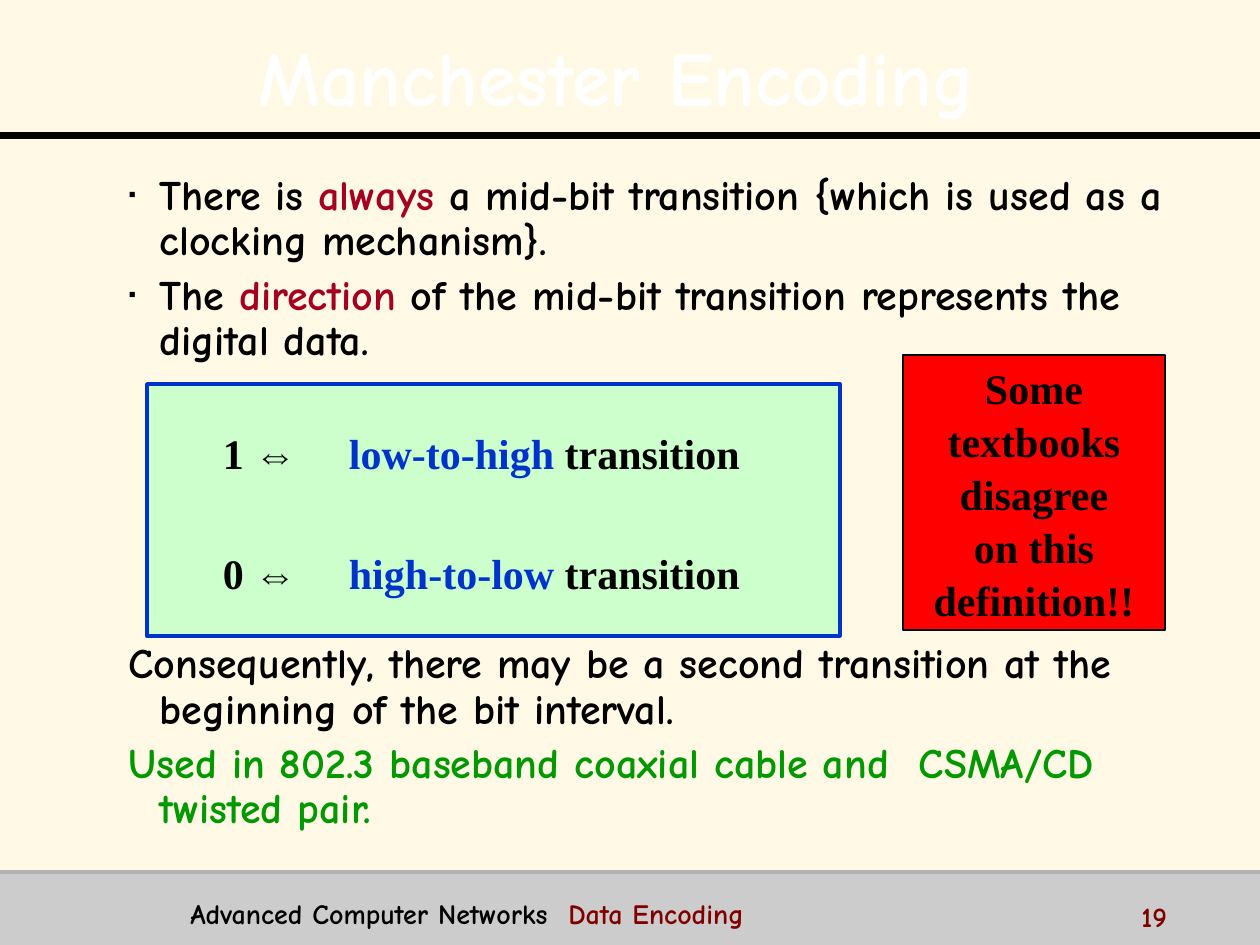
"""Builds the Manchester Encoding slide."""
import pptx
import pptx.dml.color
import pptx.enum.shapes
import pptx.enum.text
import pptx.oxml
import pptx.oxml.ns
import pptx.util

SCALE = 914400 / 126
ALIGN = pptx.enum.text.PP_ALIGN
ANCHOR = pptx.enum.text.MSO_ANCHOR
COMIC, TIMES = "Comic Neue", "Times New Roman"
BLACK, WHITE, BLUE, RED, MAROON, GREEN = "000000", "FFFFFF", "0033CC", "A50021", "800000", "009900"


def px(*nums):
    """Turn px into EMU."""
    return [pptx.util.Emu(round(num * SCALE)) for num in nums]


def paint(target, color):
    """Give a fill a solid colour."""
    target.solid()
    target.fore_color.rgb = pptx.dml.color.RGBColor.from_string(color)


def attach(node, tag, inner="", **attrs):
    """Append a drawing element to a node."""
    pairs = "".join(f' {key}="{val}"' for key, val in attrs.items())
    space = pptx.oxml.ns.nsdecls("a")
    node.append(pptx.oxml.parse_xml(f"<a:{tag} {space}{pairs}>{inner}</a:{tag}>"))


class Deck:
    """Holds the style and the current slide."""

    def __init__(self, wide, high, back):
        self.show = pptx.Presentation()
        self.show.slide_width, self.show.slide_height = px(wide, high)
        self.slide = self.show.slides.add_slide(self.show.slide_layouts[1])
        paint(self.slide.background.fill, back)

    def line(self, start, end, color, width):
        """Draw a straight line."""
        kind = pptx.enum.shapes.MSO_CONNECTOR.STRAIGHT
        line = self.slide.shapes.add_connector(kind, *px(*start, *end))
        paint(line.line.fill, color)
        line.line.width = pptx.util.Pt(width)
        attach(line._element.spPr, "effectLst")

    def rect(self, box, fill, edge=None, width=0):
        """Draw a filled rectangle and return it."""
        kind = pptx.enum.shapes.MSO_SHAPE.RECTANGLE
        rect = self.slide.shapes.add_shape(kind, *px(*box))
        rect.shadow.inherit = False
        paint(rect.fill, fill)
        if edge:
            paint(rect.line.fill, edge)
            rect.line.width = pptx.util.Pt(width)
        else:
            rect.line.fill.background()
        return rect

    def holder(self, index, box):
        """Move a placeholder and return it."""
        shape = self.slide.placeholders[index]
        shape.left, shape.top, shape.width, shape.height = px(*box)
        shape.text_frame.auto_size = pptx.enum.text.MSO_AUTO_SIZE.NONE
        return shape

    def label(self, box, runs, tab=None):
        """Add a footer text box."""
        shape = self.slide.shapes.add_textbox(*px(*box))
        self.words(shape, [runs], COMIC, 16, tab=tab)

    def words(self, shape, paras, font, size, align=ALIGN.LEFT, lead=None, gaps=(),
              hang=0, marks=0, tab=None, anchor=ANCHOR.TOP):
        """Fill a shape with paragraphs, each a list of (text, colour) runs."""
        frame = shape.text_frame
        frame.word_wrap = True
        frame.vertical_anchor = anchor
        for num, runs in enumerate(paras):
            para = frame.add_paragraph() if num else frame.paragraphs[0]
            para.alignment = align
            para.line_spacing = lead
            para.space_before = pptx.util.Pt(gaps[num - 1] if num and gaps else 0)
            props = para._p.get_or_add_pPr()
            step = px(hang)[0]
            props.set("marL", str(step))
            props.set("indent", str(-step))
            if num < marks:
                attach(props, "buClr", f'<a:srgbClr val="{BLACK}"/>')
                attach(props, "buSzPct", val=50000)
                attach(props, "buChar", char="▪")
            else:
                attach(props, "buNone")
            if tab:
                attach(props, "tabLst", f'<a:tab pos="{px(tab)[0]}" algn="l"/>')
            para.font.name, para.font.size, para.font.bold = font, pptx.util.Pt(size), True
            for text, color in runs:
                run = para.add_run()
                run.text = text
                paint(run.font.fill, color)

    def shade(self, shape):
        """Give the runs of a shape a text shadow."""
        for para in shape.text_frame.paragraphs:
            for run in para.runs:
                attach(run._r.get_or_add_rPr(), "effectLst",
                       '<a:outerShdw dist="35921" dir="2700000">'
                       f'<a:srgbClr val="{BLACK}"/></a:outerShdw>')


def main():
    """Build and save the slide."""
    deck = Deck(1260, 945, "FFF9E6")
    deck.rect((0, 872, 1260, 73), "CCCCCC")
    deck.line((0, 136), (1260, 136), BLACK, 4)
    deck.line((0, 872), (1260, 872), "B2B2B2", 2)

    title = deck.holder(0, (25, 16, 1211, 110))
    deck.words(title, [[("Manchester Encoding ", WHITE)]], COMIC, 44, ALIGN.CENTER, 1.1,
               anchor=ANCHOR.MIDDLE)
    deck.shade(title)

    body = deck.holder(1, (116, 168, 1071, 693))
    deck.words(body, [
        [("There is ", BLACK), ("always", RED),
         (" a mid-bit transition {which is used as a clocking mechanism}.", BLACK)],
        [("The ", BLACK), ("direction", RED),
         (" of the mid-bit transition represents the digital data.", BLACK)],
        [("Consequently, there may be a second transition at the beginning of the bit interval.",
          BLACK)],
        [("Used in 802.3 baseband coaxial cable and  CSMA/CD twisted pair.", GREEN)],
    ], COMIC, 24, lead=0.9, gaps=(5, 159, 5), hang=31, marks=2)

    rule = deck.rect((147, 384, 693, 252), "CCFFCC", BLUE, 2)
    rule.text_frame.margin_left, rule.text_frame.margin_top = px(76, 12)
    deck.words(rule, [
        [(f"{bit} ⇔\t", BLACK), (move, BLUE), (" transition", BLACK)]
        for bit, move in ((1, "low-to-high"), (0, "high-to-low"))
    ], TIMES, 24, gaps=(40,), tab=104, anchor=ANCHOR.MIDDLE)

    note = deck.rect((903, 355, 262, 275), "FF0000", BLACK, 0.75)
    lines = ("Some", "textbooks", "disagree", "on this", "definition!!")
    deck.words(note, [[(line, BLACK)] for line in lines], TIMES, 24, ALIGN.CENTER, 1.05,
               anchor=ANCHOR.MIDDLE)

    deck.label((178, 890, 917, 39),
               [("Advanced Computer Networks\t", BLACK), ("Data Encoding", MAROON)], 387)
    deck.label((1129, 893, 126, 32), [("19", MAROON)])
    deck.show.save("out.pptx")


if __name__ == "__main__":
    main()
